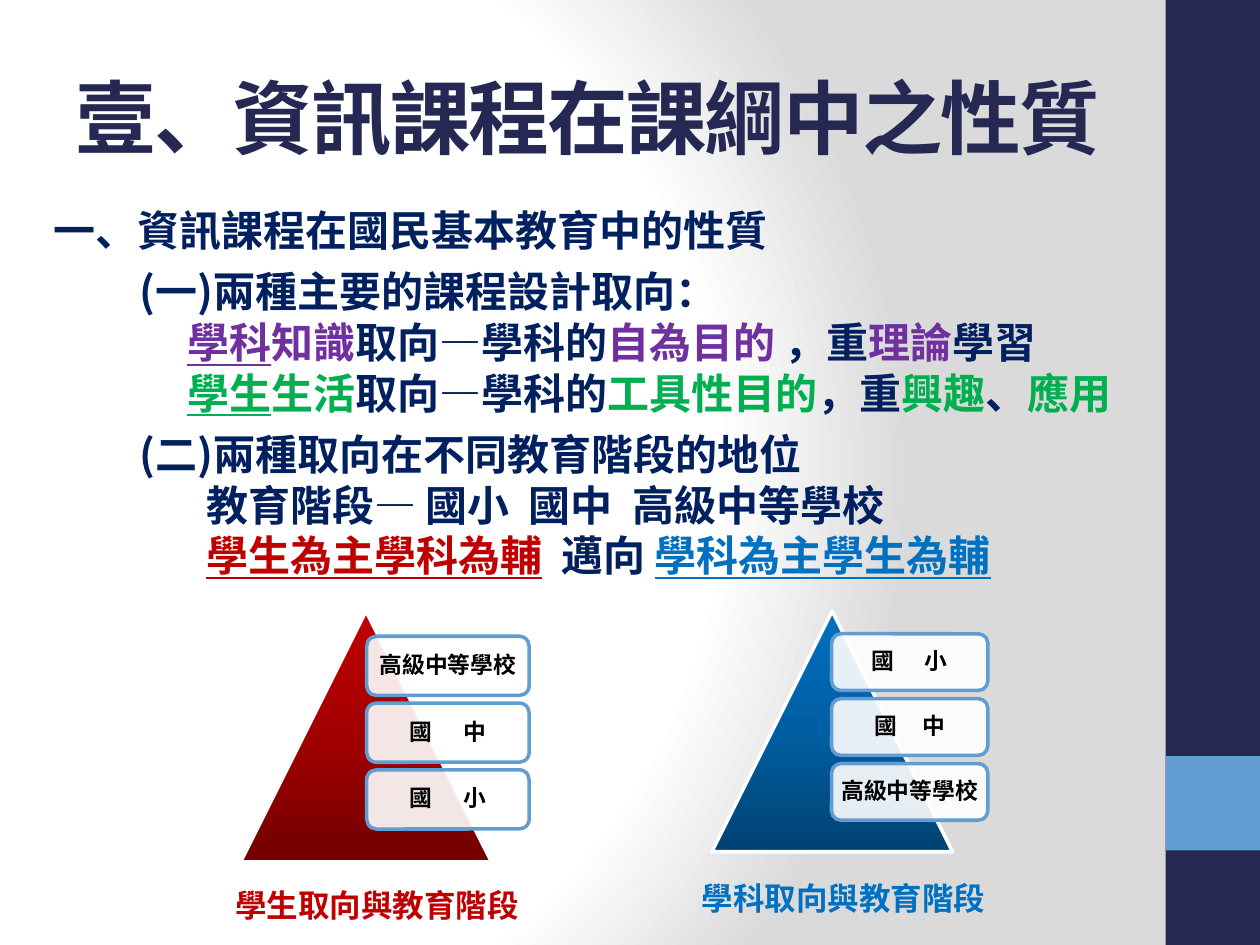
from lxml import etree
from pptx import Presentation
from pptx.dml.color import RGBColor
from pptx.enum.shapes import MSO_SHAPE as SHAPE
from pptx.enum.text import MSO_ANCHOR as ANCHOR, PP_ALIGN as ALIGN
from pptx.oxml.ns import qn
from pptx.util import Inches, Pt

FONT = "Noto Sans CJK SC"
C = {"white": "FFFFFF", "gray": "DADADA", "black": "000000", "dark": "242852",
     "accent": "629DD1", "navy": "002060", "purple": "7030A0", "green": "00B050",
     "red": "C00000", "red_mid": "A20000", "red_deep": "720000",
     "blue": "0070C0", "blue_mid": "005EA2", "blue_deep": "004272"}

# Content: a run is text or (text, format)
TITLE = "壹、資訊課程在課綱中之性質"
PURPLE, GREEN = {"color": "purple"}, {"color": "green"}
BODY = [  # left margin, space before, runs
    (0.12, 0, ["一、資訊課程在國民基本教育中的性質"]),
    (0.8, 6, ["(一)兩種主要的課程設計取向："]),
    (1.18, 0, [("學科", {"color": "purple", "underline": True}), ("知識", PURPLE),
               "取向—學科的", ("自為目的 ", PURPLE), "，重", ("理論", PURPLE), "學習"]),
    (1.18, 0, [("學生", {"color": "green", "underline": True}), ("生活", GREEN),
               "取向—學科的", ("工具性目的", GREEN), "，重", ("興趣", GREEN),
               "、", ("應用", GREEN)]),
    (0.8, 6, ["(二)兩種取向在不同教育階段的地位"]),
    (1.33, 0, ["教育階段— 國小  國中  高級中等學校"]),
    (1.33, 0, [("學生為主學科為輔", {"color": "red", "underline": True}), "  邁向 ",
               ("學科為主學生為輔", {"color": "blue", "underline": True})]),
]


def spread(first, last, gap):
    """Two characters held apart by one widened space."""
    return [first, (" ", {"spacing": gap}), last]


SENIOR = ["高級中等學校"]
PYRAMIDS = [
    {"at": (1.91, 4.85), "side": 1.99, "hue": "red",
     "label_at": (2.91, 5.05), "label_size": (1.29, 0.47), "pitch": 0.53,
     "labels": [SENIOR, spread("國", "中", 14.5), spread("國", "小", 14.5)],
     "caption": "學生取向與教育階段", "caption_at": (1.77, 6.98)},
    {"at": (5.65, 4.85), "side": 1.91, "hue": "blue",
     "label_at": (6.6, 5.03), "label_size": (1.24, 0.45), "pitch": 0.515,
     "labels": [spread("國", "小", 14.5), spread("國", "中", 11.6), SENIOR],
     "caption": "學科取向與教育階段", "caption_at": (5.47, 6.93)},
]


def rgb(name):
    return RGBColor.from_string(C[name])


def write(p, runs, size=24, color="navy", underline=False, spacing=0, align=ALIGN.LEFT):
    """Add runs to a paragraph; a run's own format overrides the defaults."""
    p.alignment = align
    base = {"color": color, "underline": underline, "spacing": spacing}
    for item in runs:
        text, own = (item, {}) if isinstance(item, str) else item
        fmt = {**base, **own}
        r = p.add_run()
        r.text = text
        r.font.name, r.font.size, r.font.bold = FONT, Pt(size), True
        r.font.color.rgb = rgb(fmt["color"])
        if fmt["underline"]:
            r.font.underline = True
        rPr = r.font._element
        if fmt["spacing"]:
            rPr.set("spc", str(round(fmt["spacing"] * 100)))
        ea = etree.Element(qn("a:ea"), typeface=FONT)
        rPr.find(qn("a:latin")).addnext(ea)


def add_text_box(x, y, w, h, anchor=ANCHOR.MIDDLE, wrap=False):
    tf = slide.shapes.add_textbox(Inches(x), Inches(y), Inches(w), Inches(h)).text_frame
    tf.vertical_anchor, tf.word_wrap = anchor, wrap
    return tf


def add_shape(kind, x, y, w, h, fill=None, line=None):
    sp = slide.shapes.add_shape(kind, Inches(x), Inches(y), Inches(w), Inches(h))
    sp.shadow.inherit = False
    if fill:
        sp.fill.solid()
        sp.fill.fore_color.rgb = rgb(fill)
    if line:
        sp.line.color.rgb = rgb(line)
        sp.line.width = Pt(2)
    else:
        sp.line.fill.background()
    return sp


def set_gradient(owner, fill, stops, circle=None):
    """Give a fill its stops, running upwards or along a circle."""
    fill.gradient()
    grad = owner._element.find(".//" + qn("a:gradFill"))
    for child in list(grad):
        grad.remove(child)
    gs_lst = etree.SubElement(grad, qn("a:gsLst"))
    for pos, name in stops:
        gs = etree.SubElement(gs_lst, qn("a:gs"), pos=str(pos * 1000))
        etree.SubElement(gs, qn("a:srgbClr"), val=C[name])
    if circle:
        shade = etree.SubElement(grad, qn("a:path"), {"path": "circle"})
        etree.SubElement(shade, qn("a:fillToRect"),
                         {k: str(v * 1000) for k, v in zip("ltrb", circle)})
    else:
        etree.SubElement(grad, qn("a:lin"), ang="16200000", scaled="0")


prs = Presentation()
prs.slide_width, prs.slide_height = Inches(10), Inches(7.5)
slide = prs.slides.add_slide(prs.slide_layouts[6])

# Background and side band
set_gradient(slide, slide.background.fill,
             [(0, "white"), (75, "white"), (100, "gray")], circle=(20, 50, 100, 50))
add_shape(SHAPE.RECTANGLE, 9.25, 0, 0.75, 7.5, fill="dark")
add_shape(SHAPE.RECTANGLE, 9.25, 6, 0.75, 0.75, fill="accent")

# Title
write(add_text_box(0.5, 0.3, 8.33, 1.25).paragraphs[0], [TITLE],
      size=46, color="dark", spacing=-1)

# Pyramids with stage labels and captions
for pyramid in PYRAMIDS:
    hue, side = pyramid["hue"], pyramid["side"]
    sp = add_shape(SHAPE.ISOSCELES_TRIANGLE, *pyramid["at"], side, side, line="white")
    set_gradient(sp, sp.fill, [(0, hue + "_deep"), (50, hue + "_mid"), (100, hue)])

    x, y = pyramid["label_at"]
    for i, label in enumerate(pyramid["labels"]):
        sp = add_shape(SHAPE.ROUNDED_RECTANGLE, x, y + i * pyramid["pitch"],
                       *pyramid["label_size"], fill="white", line="accent")
        white = sp._element.spPr.find(qn("a:solidFill"))[0]
        etree.SubElement(white, qn("a:alpha"), val="90000")
        tf = sp.text_frame
        tf.word_wrap, tf.vertical_anchor = False, ANCHOR.MIDDLE
        tf.margin_left = tf.margin_right = tf.margin_top = tf.margin_bottom = Inches(0.05)
        tf.paragraphs[0].line_spacing = 0.9
        write(tf.paragraphs[0], label, size=13, color="black", align=ALIGN.CENTER)

    tf = add_text_box(*pyramid["caption_at"], 2.47, 0.4)
    write(tf.paragraphs[0], [pyramid["caption"]], size=18, color=hue)

# Body outline
tf = add_text_box(0.21, 1.57, 9.13, 3.7, anchor=ANCHOR.TOP, wrap=True)
for i, (margin, before, runs) in enumerate(BODY):
    p = tf.add_paragraph() if i else tf.paragraphs[0]
    p.line_spacing, p.space_before = Pt(29), Pt(before)
    p._p.get_or_add_pPr().set("marL", str(Inches(margin)))
    write(p, runs)

prs.save("out.pptx")
